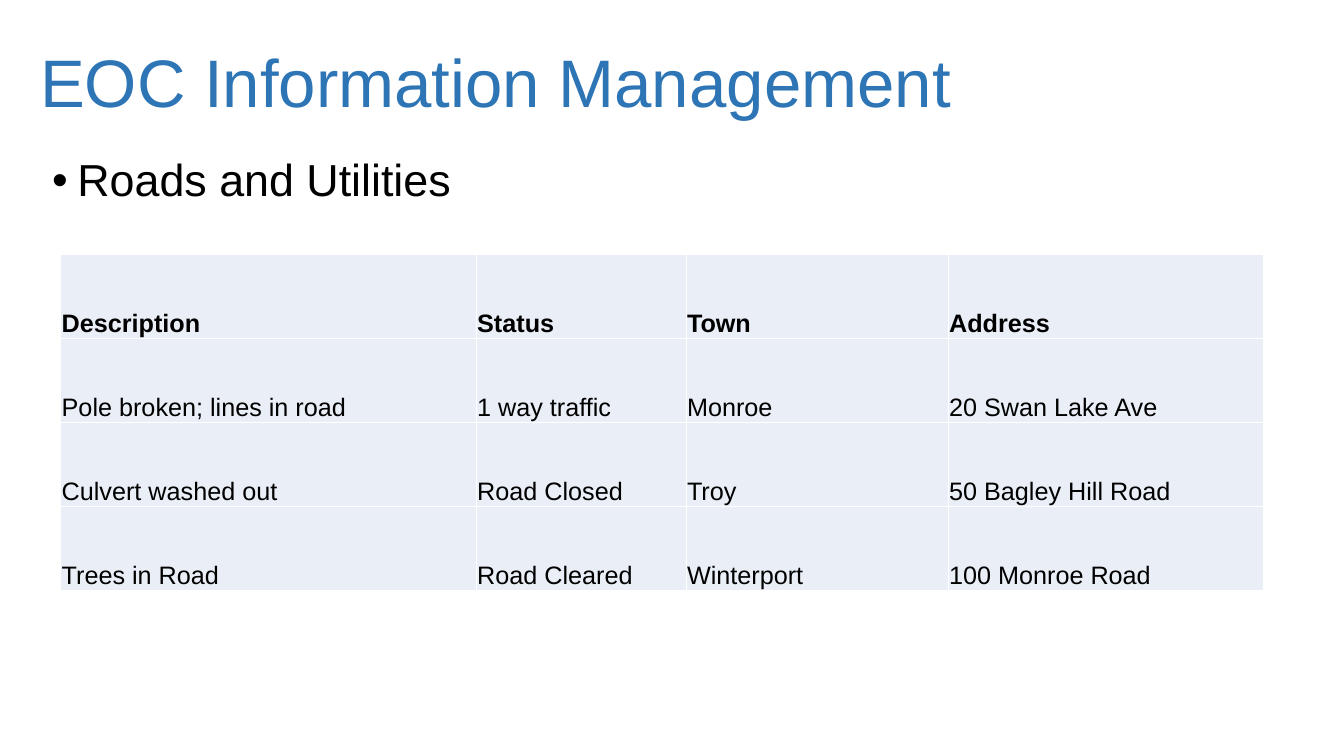
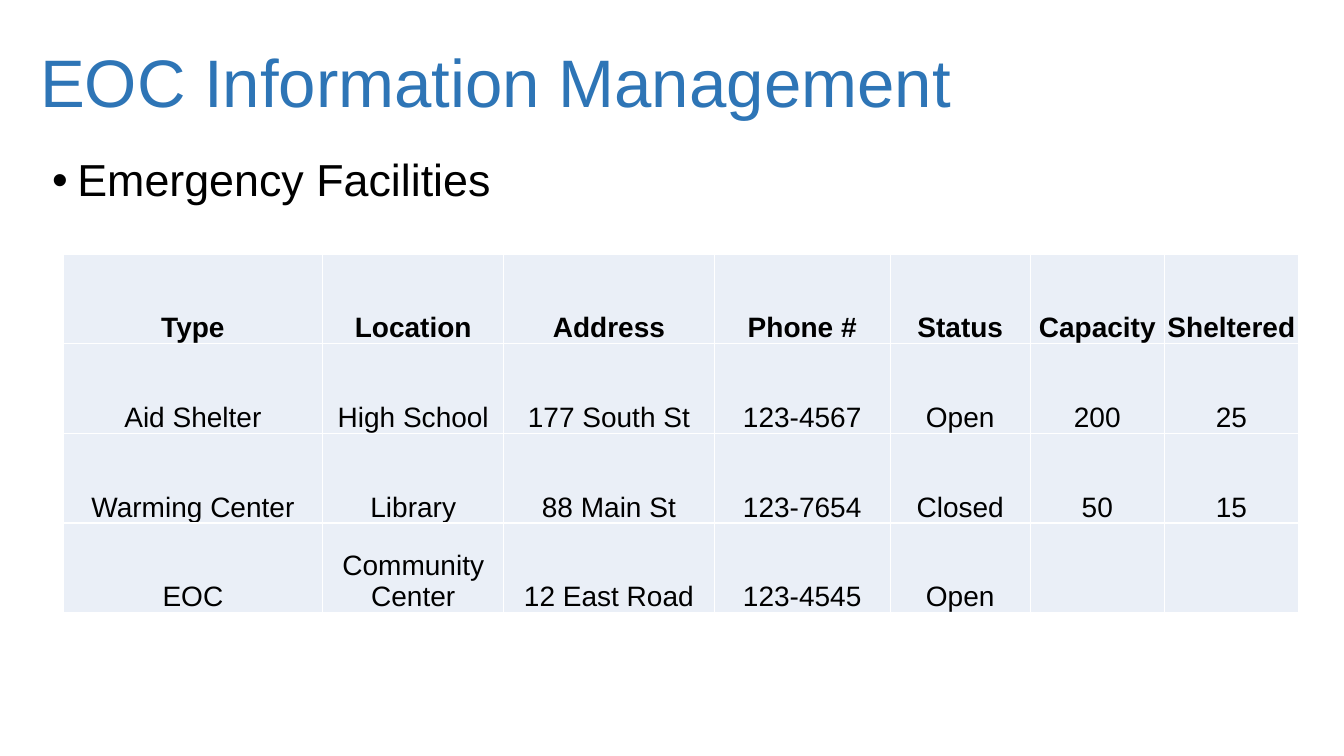
from lxml.etree import SubElement as Sub
from pptx import Presentation
from pptx.dml.color import RGBColor
from pptx.enum.text import MSO_ANCHOR as Anchor, PP_ALIGN as Align
from pptx.oxml.ns import qn
from pptx.util import Pt

# Content
TITLE = "EOC Information Management"
SLIDES = [
    {
        "topic": "Roads and Utilities", "wide": 330.5,
        "left": 43.4, "size": 18, "align": Align.LEFT, "high": 60,
        "cols": [296.8, 149.9, 187.2, 225],
        "rows": [
            ("Description", "Status", "Town", "Address"),
            ("Pole broken; lines in road", "1 way traffic", "Monroe",
             "20 Swan Lake Ave"),
            ("Culvert washed out", "Road Closed", "Troy",
             "50 Bagley Hill Road"),
            ("Trees in Road", "Road Cleared", "Winterport",
             "100 Monroe Road"),
        ],
    },
    {
        "topic": "Emergency Facilities", "wide": 453.6,
        "left": 45, "size": 20, "align": Align.CENTER, "high": 64,
        "cols": [185.6, 129.2, 150.4, 125.8, 100, 95.8, 95.8],
        "rows": [
            ("Type", "Location", "Address", "Phone #", "Status",
             "Capacity", "Sheltered"),
            ("Aid Shelter", "High School", "177 South St", "123-4567",
             "Open", "200", "25"),
            ("Warming Center", "Library", "88 Main St", "123-7654",
             "Closed", "50", "15"),
            ("EOC", "Community Center", "12 East Road", "123-4545",
             "Open", "", ""),
        ],
    },
]

# Shared style
FONT = "Arial"
BLUE, BLACK, WHITE, PALE = "2E75B6", "000000", "FFFFFF", "EAEFF7"
TOP = 181.6


def color(code):
    return RGBColor.from_string(code)


def write(frame, text, size, tint=BLACK, bold=False, align=Align.LEFT,
          anchor=Anchor.TOP, space=None, before=0, bullet=None):
    frame.word_wrap = True
    frame.vertical_anchor = anchor
    para = frame.paragraphs[0]
    para.alignment = align
    para.space_before = Pt(before)
    if space:
        para.line_spacing = space
    if bullet:
        props = para._p.get_or_add_pPr()
        props.set("marL", str(Pt(18)))
        props.set("indent", str(Pt(-18)))
        Sub(props, qn("a:buFont")).set("typeface", FONT)
        Sub(props, qn("a:buChar")).set("char", bullet)
    if text:
        run = para.add_run()
        run.text = text
        font = run.font
        font.name, font.size, font.bold = FONT, Pt(size), bold
        font.color.rgb = color(tint)


def add_text(slide, box, text, size, **style):
    shape = slide.shapes.add_textbox(*map(Pt, box))
    write(shape.text_frame, text, size, **style)


def border(cell):
    props = cell._tc.get_or_add_tcPr()
    for side in ("lnL", "lnR", "lnT", "lnB"):
        line = Sub(props, qn("a:" + side), w=str(Pt(1)))
        Sub(Sub(line, qn("a:solidFill")), qn("a:srgbClr")).set("val", WHITE)


def add_grid(slide, data):
    rows, cols, high = data["rows"], data["cols"], data["high"]
    table = slide.shapes.add_table(
        len(rows), len(cols), Pt(data["left"]), Pt(TOP),
        Pt(sum(cols)), Pt(high * len(rows))).table
    table.first_row = table.horz_banding = False
    for col, wide in zip(table.columns, cols):
        col.width = Pt(wide)
    for r, row in enumerate(rows):
        table.rows[r].height = Pt(high)
        for c, text in enumerate(row):
            cell = table.cell(r, c)
            cell.margin_left = cell.margin_right = cell.margin_top = Pt(0.7)
            cell.margin_bottom = Pt(0)
            cell.vertical_anchor = Anchor.BOTTOM
            border(cell)
            cell.fill.solid()
            cell.fill.fore_color.rgb = color(PALE)
            write(cell.text_frame, text, data["size"], bold=r == 0,
                  align=data["align"], anchor=None)
            cell.vertical_anchor = Anchor.BOTTOM


def main():
    deck = Presentation()
    deck.slide_width, deck.slide_height = Pt(960), Pt(540)
    for data in SLIDES:
        slide = deck.slides.add_slide(deck.slide_layouts[6])
        # Title and topic
        add_text(slide, (21.6, 23, 922.4, 76.4), TITLE, 48, tint=BLUE,
                 anchor=Anchor.MIDDLE, space=0.9)
        add_text(slide, (30.2, 109.4, data["wide"], 61.2), data["topic"], 32,
                 space=0.9, before=10, bullet="•")
        # Status table
        add_grid(slide, data)
    deck.save("out.pptx")


if __name__ == "__main__":
    main()
